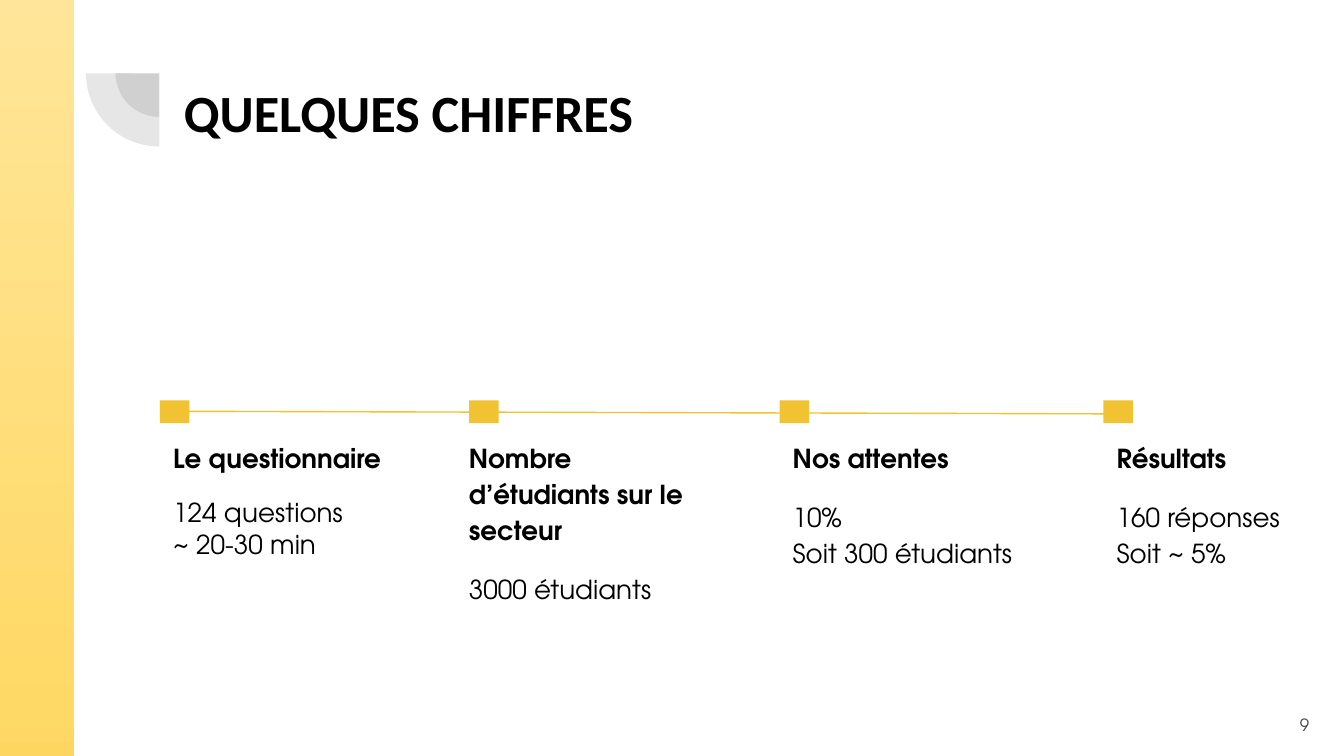
import copy

import lxml.etree
import pptx
import pptx.dml.color
import pptx.enum.shapes
import pptx.enum.text
import pptx.oxml.ns
import pptx.util
from pptx.util import Inches

BLACK = pptx.dml.color.RGBColor(0x00, 0x00, 0x00)
GREY = pptx.dml.color.RGBColor(0x42, 0x42, 0x42)
GOLD = pptx.dml.color.RGBColor(0xF1, 0xC2, 0x32)
BAND_STOPS = [
    (0, pptx.dml.color.RGBColor(0xFF, 0xE5, 0x99)),
    (0.91, pptx.dml.color.RGBColor(0xFF, 0xD9, 0x66)),
    (1, pptx.dml.color.RGBColor(0xFA, 0xD2, 0x5C)),
]
SHAPES = pptx.enum.shapes.MSO_SHAPE
ALIGN = pptx.enum.text.PP_ALIGN
BODY_FONT = "TeX Gyre Adventor"
MARGIN = Inches(0.1)
LINE_SPACING = 1.15

QUARTER_DISCS = [(0.86, 0.22, 0.65), (0.64, 0, 1.09)]
MILESTONES = [
    (1.19, 1.19, 2.06, "Le questionnaire", ["124 questions", "~ 20-30 min"], 1),
    (3.49, 3.39, 2.06, "Nombre d’étudiants sur le secteur", ["3000 étudiants"], LINE_SPACING),
    (5.8, 5.8, 2.06, "Nos attentes", ["10%", "Soit 300 étudiants"], LINE_SPACING),
    (8.21, 8.21, 1.49, "Résultats", ["160 réponses Soit ~ 5%"], LINE_SPACING),
]


def set_attributes(target, values):
    for name, value in values.items():
        setattr(target, name, value)


def add_shape(slide, kind, left, top, width, height):
    shape = slide.shapes.add_shape(
        kind, Inches(left), Inches(top), Inches(width), Inches(height)
    )
    shape.shadow.inherit = False
    shape.line.fill.background()
    return shape


def fill_solid(shape, color):
    shape.fill.solid()
    shape.fill.fore_color.rgb = color


def add_quarter_disc(slide, left, top, diameter):
    disc = add_shape(slide, SHAPES.PIE, left, top, diameter, diameter)
    disc.rotation = 270
    disc.adjustments[0] = 108
    disc.adjustments[1] = 162
    fill_solid(disc, GREY)
    color = disc._element.spPr.find(".//" + pptx.oxml.ns.qn("a:srgbClr"))
    lxml.etree.SubElement(color, pptx.oxml.ns.qn("a:alpha"), val="13000")


def add_gradient_band(slide):
    band = add_shape(slide, SHAPES.RECTANGLE, -0.02, -0.07, 0.57, 5.92)
    band.fill.gradient()
    band.fill.gradient_angle = 270
    stop_list = band._element.spPr.find(".//" + pptx.oxml.ns.qn("a:gsLst"))
    stop_list.append(copy.deepcopy(stop_list[-1]))
    for stop, (position, color) in zip(band.fill.gradient_stops, BAND_STOPS):
        stop.position = position
        stop.color.rgb = color


def add_timeline(slide):
    line = slide.shapes.add_connector(
        pptx.enum.shapes.MSO_CONNECTOR.STRAIGHT,
        Inches(1.19), Inches(3.06), Inches(8.43), Inches(3.08),
    )
    line.line.color.rgb = GOLD
    line.line.width = pptx.util.Pt(0.75)
    lxml.etree.SubElement(line._element.spPr, pptx.oxml.ns.qn("a:effectLst"))


def add_text(slide, left, top, width, height, paragraphs, frame_format=None):
    box = slide.shapes.add_textbox(
        Inches(left), Inches(top), Inches(width), Inches(height)
    )
    frame = box.text_frame
    margins = {f"margin_{side}": MARGIN for side in ("left", "top", "right", "bottom")}
    set_attributes(frame, {"word_wrap": True, **margins, **(frame_format or {})})
    for index, (text, font_format, paragraph_format) in enumerate(paragraphs):
        paragraph = frame.add_paragraph() if index else frame.paragraphs[0]
        run = paragraph.add_run()
        run.text = text
        font_values = dict(font_format)
        run.font.color.rgb = font_values.pop("color")
        set_attributes(run.font, font_values)
        set_attributes(paragraph, paragraph_format)


def add_milestone(slide, marker_left, text_left, width, heading, details, spacing):
    marker = add_shape(slide, SHAPES.RECTANGLE, marker_left, 2.98, 0.22, 0.17)
    fill_solid(marker, GOLD)
    detail_font = {
        "name": BODY_FONT, "size": pptx.util.Pt(14), "bold": False, "color": BLACK
    }
    paragraphs = [
        (heading, {**detail_font, "bold": True}, {"line_spacing": LINE_SPACING})
    ]
    for index, detail in enumerate(details):
        space = pptx.util.Pt(0 if index else 12)
        paragraphs.append(
            (detail, detail_font, {"line_spacing": spacing, "space_before": space})
        )
    add_text(
        slide, text_left, 3.16, width, 1.15, paragraphs,
        {"auto_size": pptx.enum.text.MSO_AUTO_SIZE.SHAPE_TO_FIT_TEXT},
    )


def main():
    presentation = pptx.Presentation()
    presentation.slide_width = Inches(10)
    presentation.slide_height = presentation.slide_width * 9 // 16
    slide = presentation.slides.add_slide(presentation.slide_layouts[6])

    for disc in QUARTER_DISCS:
        add_quarter_disc(slide, *disc)
    title_font = {
        "name": "Calibri", "size": pptx.util.Pt(28), "bold": True, "color": BLACK
    }
    add_text(slide, 1.27, 0.5, 7.69, 1.09, [("QUELQUES CHIFFRES", title_font, {})])
    add_gradient_band(slide)
    add_timeline(slide)
    for milestone in MILESTONES:
        add_milestone(slide, *milestone)
    number_font = {"name": BODY_FONT, "size": pptx.util.Pt(9), "color": GREY}
    add_text(
        slide, 9.24, 5.18, 0.6, 0.43,
        [("9", number_font, {"alignment": ALIGN.RIGHT})],
        {"vertical_anchor": pptx.enum.text.MSO_ANCHOR.MIDDLE},
    )
    presentation.save("out.pptx")


if __name__ == "__main__":
    main()
